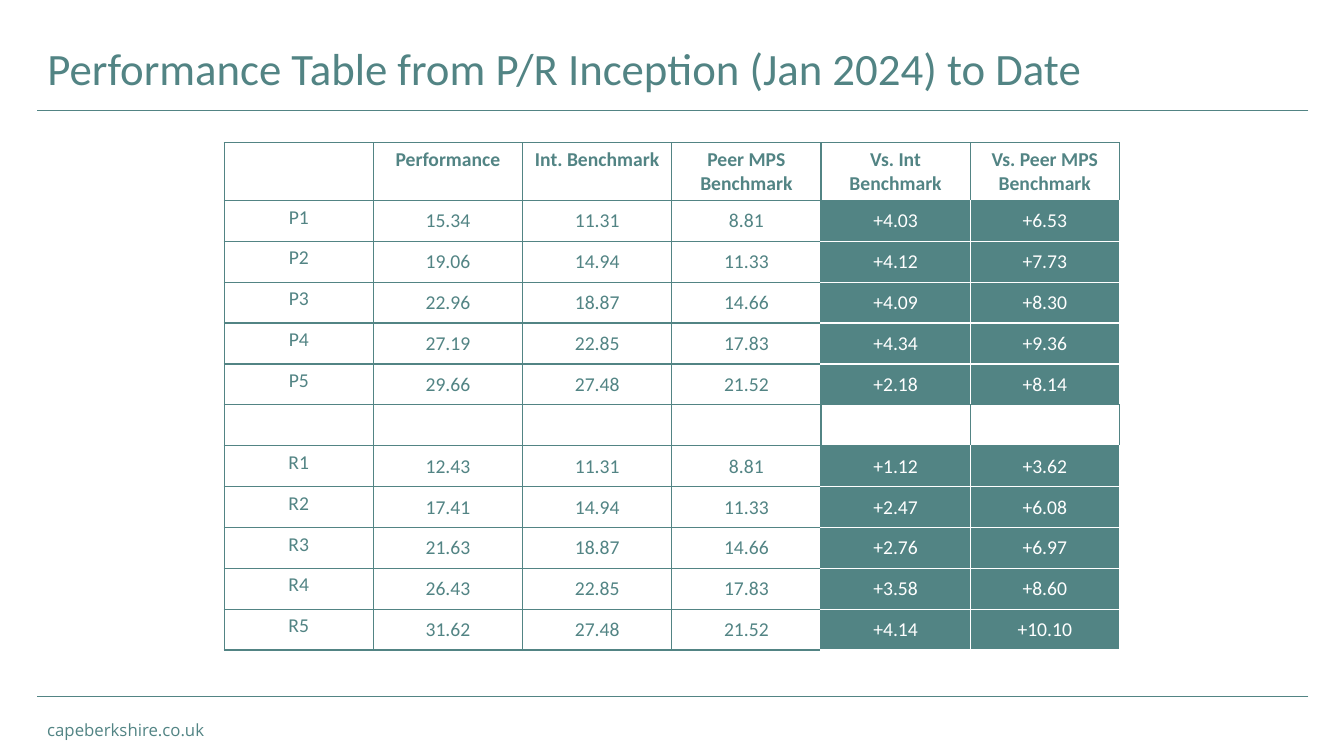
"""Build the performance table slide."""
from dataclasses import dataclass

from lxml import etree
from pptx import Presentation
from pptx import util as u
from pptx.dml import color
from pptx.enum import shapes, text
from pptx.oxml import ns

TEAL, WHITE = "528484", "FFFFFF"
HEADINGS = ["", "Performance", "Int. Benchmark", "Peer MPS Benchmark",
            "Vs. Int Benchmark", "Vs. Peer MPS Benchmark"]
BENCHMARKS = [(11.31, 8.81), (14.94, 11.33), (18.87, 14.66), (22.85, 17.83), (27.48, 21.52)]


@dataclass
class Group:
    letter: str
    first_row: int
    performance: list[float]
    bottom: str


@dataclass
class Edges:
    left: str = TEAL
    right: str = TEAL
    top: str = TEAL
    bottom: str = TEAL


GROUPS = [
    Group("P", 1, [15.34, 19.06, 22.96, 27.19, 29.66], TEAL),
    Group("R", 7, [12.43, 17.41, 21.63, 26.43, 31.62], WHITE),
]


def rgb(value: str) -> color.RGBColor:
    """Turn a hex string into a colour."""
    return color.RGBColor.from_string(value)


def add_run(p, words: str, size: float, ink: str = TEAL, font: str = "Calibri",
            bold: bool = False) -> None:
    """Append one formatted run to a paragraph."""
    r = p.add_run()
    r.text = words
    r.font.size, r.font.name, r.font.bold = u.Pt(size), font, bold
    r.font.color.rgb = rgb(ink)


def add_rule(slide, y: float) -> None:
    """Draw a thin line across the slide."""
    line = slide.shapes.add_connector(
        shapes.MSO_CONNECTOR.STRAIGHT, u.Cm(32.97), u.Cm(y), u.Cm(0.94), u.Cm(y))
    line.line.color.rgb = rgb(TEAL)
    line.line.width = u.Pt(0.75)
    etree.SubElement(line._element.spPr, ns.qn("a:effectLst"))


def set_edges(cell, edges: Edges) -> None:
    """Give a cell its four one-point borders."""
    tc_pr = cell._tc.get_or_add_tcPr()
    sides = [("a:lnL", edges.left), ("a:lnR", edges.right),
             ("a:lnT", edges.top), ("a:lnB", edges.bottom)]
    for i, (tag, ink) in enumerate(sides):
        ln = etree.Element(ns.qn(tag), w=str(u.Pt(1)))
        fill = etree.SubElement(ln, ns.qn("a:solidFill"))
        etree.SubElement(fill, ns.qn("a:srgbClr"), val=ink)
        tc_pr.insert(i, ln)


def write_cell(cell, words: str, ink: str = TEAL, bold: bool = False) -> None:
    """Write centred text in a cell."""
    p = cell.text_frame.paragraphs[0]
    p.alignment = text.PP_ALIGN.CENTER
    add_run(p, words, 14, ink, bold=bold)


def write_number(cell, words: str, ink: str = TEAL) -> None:
    """Write a figure in a tight, vertically centred cell."""
    cell.vertical_anchor = text.MSO_ANCHOR.MIDDLE
    cell.margin_left = cell.margin_right = cell.margin_top = u.Cm(0.02)
    cell.margin_bottom = 0
    write_cell(cell, words, ink)


def fill_group(table, group: Group, edges: dict[tuple[int, int], Edges]) -> None:
    """Write one group of rows and note the borders of its shaded cells."""
    last = len(BENCHMARKS) - 1
    for i, (value, marks) in enumerate(zip(group.performance, BENCHMARKS)):
        row = group.first_row + i
        write_cell(table.cell(row, 0), f"{group.letter}{i + 1}")
        for col, number in enumerate((value, *marks), 1):
            write_number(table.cell(row, col), f"{number:.2f}")
        for col, mark in enumerate(marks, 4):
            cell = table.cell(row, col)
            write_number(cell, f"{value - mark:+.2f}", WHITE)
            cell.fill.solid()
            cell.fill.fore_color.rgb = rgb(TEAL)
            edges[row, col] = Edges(
                left=TEAL if col == 4 else WHITE, right=WHITE,
                top=TEAL if i == 0 else WHITE,
                bottom=group.bottom if i == last else WHITE)


def add_performance_table(slide) -> None:
    """Add the table with its heading row and both groups."""
    sp = slide.shapes.add_table(12, 6, u.Cm(5.65), u.Cm(3.6), u.Cm(22.56), u.Cm(12.78))
    table = sp.table
    table.first_row = table.horz_banding = False
    for column in table.columns:
        column.width = u.Cm(3.76)
    for i, row in enumerate(table.rows):
        row.height = u.Cm(1.03 if i else 1.45)
        for cell in row.cells:
            cell.fill.background()
    for col, heading in enumerate(HEADINGS):
        if heading:
            write_cell(table.cell(0, col), heading, bold=True)
    edges: dict[tuple[int, int], Edges] = {}
    for group in GROUPS:
        fill_group(table, group, edges)
    for i, row in enumerate(table.rows):
        for j, cell in enumerate(row.cells):
            set_edges(cell, edges.get((i, j), Edges()))


def add_title(slide) -> None:
    """Place and write the title."""
    sp = slide.shapes.title
    sp.left, sp.top, sp.width, sp.height = u.Cm(0.94), u.Cm(1.04), u.Cm(29.21), u.Cm(1.5)
    tf = sp.text_frame
    tf.word_wrap = True
    tf.auto_size = text.MSO_AUTO_SIZE.SHAPE_TO_FIT_TEXT
    tf.vertical_anchor = text.MSO_ANCHOR.MIDDLE
    p = tf.paragraphs[0]
    p.alignment, p.line_spacing = text.PP_ALIGN.LEFT, 0.9
    add_run(p, "Performance Table from P/R Inception (Jan 2024) to Date", 32)


def add_footer(slide) -> None:
    """Write the web address at the foot."""
    sp = slide.shapes.add_textbox(u.Cm(0.94), u.Cm(18.01), u.Cm(9.73), u.Cm(0.76))
    tf = sp.text_frame
    tf.word_wrap = True
    tf.auto_size = text.MSO_AUTO_SIZE.SHAPE_TO_FIT_TEXT
    add_run(tf.paragraphs[0], "capeberkshire.co.uk", 12, font="Open Sans")


def main() -> None:
    """Build and save the slide."""
    prs = Presentation()
    prs.slide_width, prs.slide_height = u.Cm(33.87), u.Cm(19.05)
    slide = prs.slides.add_slide(prs.slide_layouts[5])
    add_footer(slide)
    for y in (17.55, 2.78):
        add_rule(slide, y)
    add_title(slide)
    add_performance_table(slide)
    prs.save("out.pptx")


if __name__ == "__main__":
    main()
